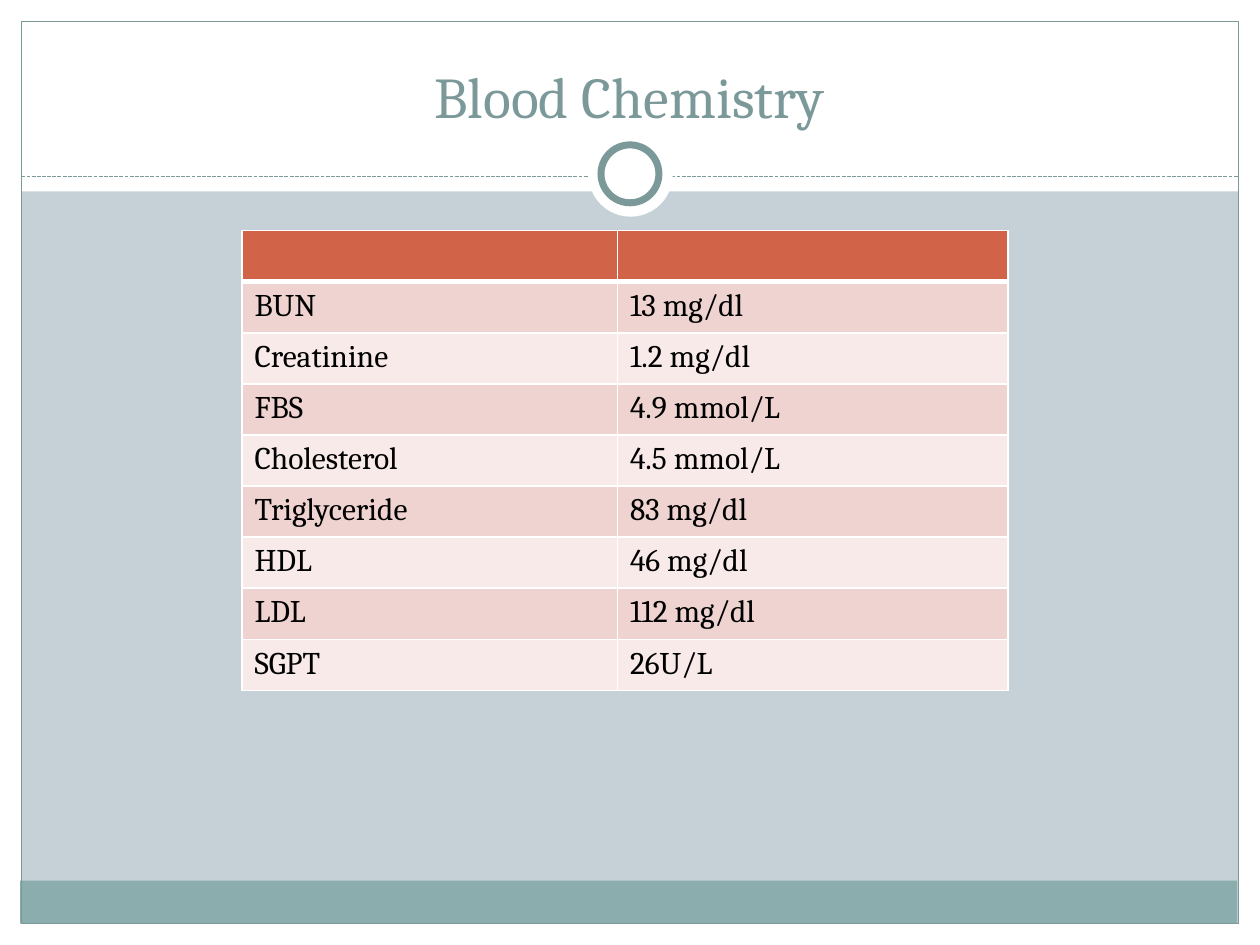
from lxml.etree import SubElement
from pptx import Presentation
from pptx.dml.color import RGBColor
from pptx.enum.dml import MSO_LINE
from pptx.enum.shapes import MSO_CONNECTOR, MSO_SHAPE
from pptx.enum.text import MSO_ANCHOR, PP_ALIGN
from pptx.oxml.ns import qn
from pptx.util import Inches, Pt

WHITE, TEAL = "FFFFFF", "7C999A"
ROWS = [
    ("", ""),
    ("BUN", "13 mg/dl"),
    ("Creatinine", "1.2 mg/dl"),
    ("FBS", "4.9 mmol/L"),
    ("Cholesterol", "4.5 mmol/L"),
    ("Triglyceride", "83 mg/dl"),
    ("HDL", "46 mg/dl"),
    ("LDL", "112 mg/dl"),
    ("SGPT", "26U/L"),
]


def color(code):
    return RGBColor.from_string(code)


class Deck:
    """Holds the style and the current slide."""

    font = "Cambria"

    def __init__(self, slide):
        self.slide = slide
        self.shapes = slide.shapes

    def back(self, code):
        fill = self.slide.background.fill
        fill.solid()
        fill.fore_color.rgb = color(code)

    def shape(self, kind, box, fill=None, line=None, width=0.75):
        shape = self.shapes.add_shape(kind, *map(Inches, box))
        shape.shadow.inherit = False
        if fill:
            shape.fill.solid()
            shape.fill.fore_color.rgb = color(fill)
        else:
            shape.fill.background()
        if line:
            shape.line.color.rgb = color(line)
            shape.line.width = Pt(width)
        else:
            shape.line.fill.background()

    def rule(self, left, right, top):
        ends = map(Inches, (left, top, right, top))
        rule = self.shapes.add_connector(MSO_CONNECTOR.STRAIGHT, *ends)
        rule.line.color.rgb = color(TEAL)
        rule.line.width = Pt(0.75)
        rule.line.dash_style = MSO_LINE.SQUARE_DOT
        SubElement(rule._element.spPr, qn("a:effectLst"))

    def text(self, para, words, size, code):
        run = para.add_run()
        run.text = words
        run.font.name = self.font
        run.font.size = Pt(size)
        run.font.color.rgb = color(code)

    def title(self, words, box):
        title = self.shapes.title
        title.left, title.top, title.width, title.height = map(Inches, box)
        frame = title.text_frame
        frame.vertical_anchor = MSO_ANCHOR.BOTTOM
        frame.paragraphs[0].alignment = PP_ALIGN.CENTER
        self.text(frame.paragraphs[0], words, 33, TEAL)
        self.shapes._spTree.append(title._element)

    def border(self, cell, side, width):
        props = cell._tc.get_or_add_tcPr()
        line = SubElement(props, qn(f"a:ln{side}"), w=str(Pt(width)))
        fill = SubElement(line, qn("a:solidFill"))
        SubElement(fill, qn("a:srgbClr"), val=WHITE)

    def table(self, rows, box, widths):
        size = len(rows), len(widths)
        table = self.shapes.add_table(*size, *map(Inches, box)).table
        for col, width in zip(table.columns, widths):
            col.width = Inches(width)
        for i, row in enumerate(rows):
            fill = "D16349" if i == 0 else ("F7EAE9", "EED3D0")[i % 2]
            for j, words in enumerate(row):
                cell = table.cell(i, j)
                for side in "LRTB":
                    thick = (i, side) in ((0, "B"), (1, "T"))
                    self.border(cell, side, 3 if thick else 1)
                cell.fill.solid()
                cell.fill.fore_color.rgb = color(fill)
                if words:
                    para = cell.text_frame.paragraphs[0]
                    self.text(para, words, 18, "000000")


def main():
    prs = Presentation()
    prs.slide_width, prs.slide_height = Inches(10), Inches(7.5)
    deck = Deck(prs.slides.add_slide(prs.slide_layouts[5]))
    deck.back("C5D1D7")
    rect, oval = MSO_SHAPE.RECTANGLE, MSO_SHAPE.OVAL
    bands = [
        (0, 7.33, 10, 0.17),
        (0, 0, 10, 1.52),
        (0, 0, 0.17, 7.5),
        (9.83, 0, 0.17, 7.5),
    ]
    for box in bands:
        deck.shape(rect, box, WHITE)
    deck.shape(rect, (0.16, 6.99, 9.66, 0.34), "8CADAE")
    deck.shape(rect, (0.17, 0.17, 9.66, 7.16), line=TEAL)
    deck.rule(0.17, 9.83, 1.4)
    deck.shape(oval, (4.67, 1.05, 0.67, 0.67), WHITE)
    deck.shape(oval, (4.77, 1.15, 0.46, 0.46), WHITE, TEAL, 4)
    deck.title("Blood Chemistry", (0.33, 0.25, 9.33, 0.83))
    deck.table(ROWS, (1.92, 1.83, 6.08, 3.65), (2.98, 3.1))
    prs.save("out.pptx")


if __name__ == "__main__":
    main()
